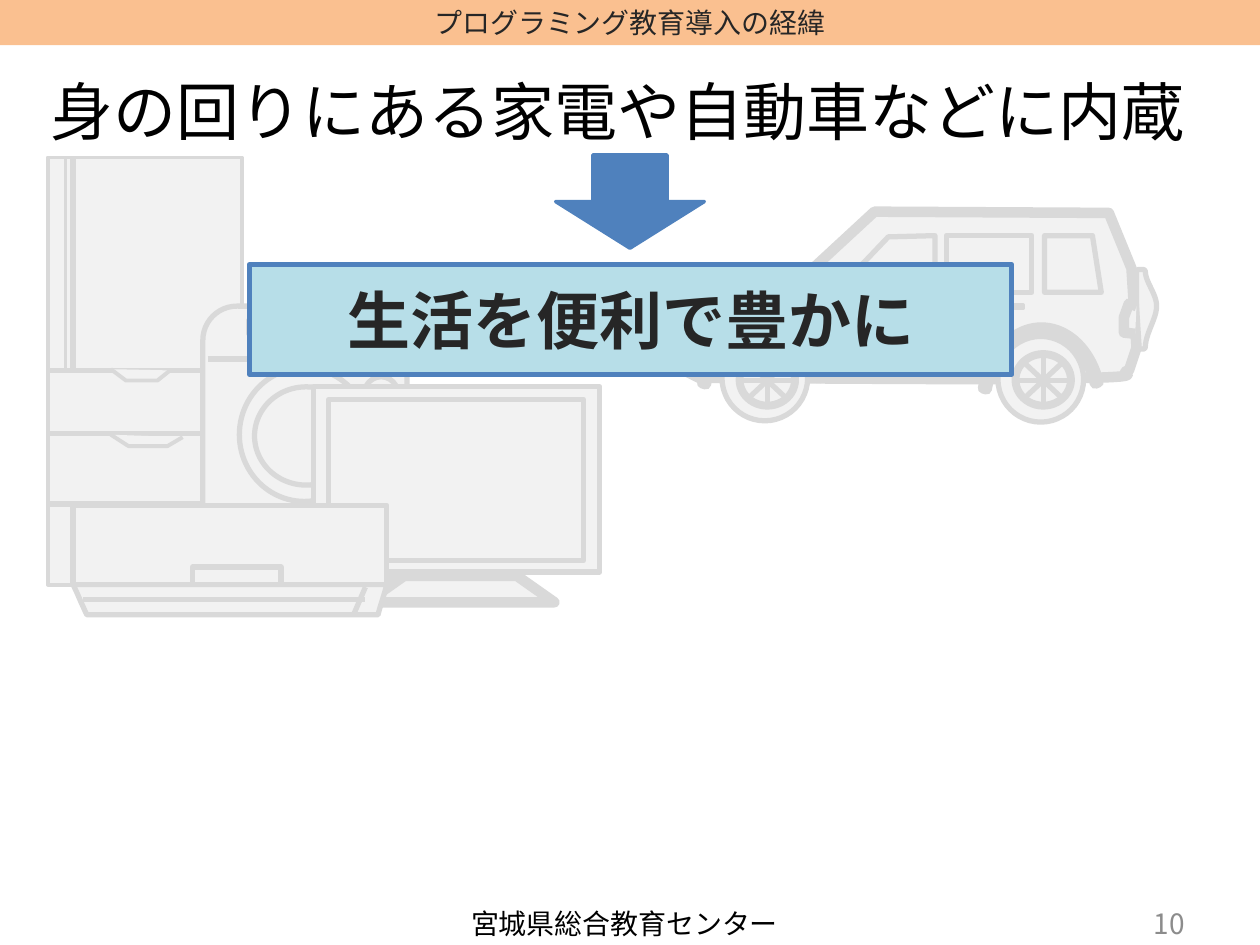
from lxml import etree
from pptx import Presentation
from pptx import util as u
from pptx.dml.color import RGBColor
from pptx.enum import shapes, text
from pptx.oxml.ns import qn

FONT = "Noto Sans CJK JP"
HUES = {"pale": "F2F2F2", "grey": "D9D9D9", "blue": "4F81BD", "aqua": "B7DEE8",
        "peach": "FAC090", "dark": "262626", "black": "000000", "page": "8C8C8C"}
KIND = shapes.MSO_SHAPE
RECT, OVAL, ROUND = KIND.RECTANGLE, KIND.OVAL, KIND.ROUNDED_RECTANGLE
LINE, PATH, OPEN = "line", "path", "open"
LEFT, MID, RIGHT = text.PP_ALIGN.LEFT, text.PP_ALIGN.CENTER, text.PP_ALIGN.RIGHT

FRIDGE = [
    (RECT, 2.25, (0.38, 1.25, 1.54, 3.39)),
    (LINE, 3, (0.58, 1.25, 0.58, 2.94)),
    (LINE, 2.25, (0.52, 1.25, 0.52, 2.94)),
    *[(LINE, 3, (0.38, y, 1.92, y)) for y in (2.94, 3.44, 4)],
    (OPEN, 2.25, [(0.88, 2.93), (1, 3.02), (1.25, 3.02), (1.35, 2.94)]),
    (OPEN, 2.25, [(0.88, 3.45), (1.02, 3.54), (1.33, 3.54), (1.45, 3.47)]),
]
WASHER = [
    (ROUND, 3, (1.61, 2.43, 1.62, 2.19)),
    (OVAL, 3, (1.9, 2.92, 1.03, 1.06)),
    (OVAL, 3, (2.02, 3.07, 0.82, 0.78)),
    (OVAL, 3, (2.89, 2.99, 0.27, 0.28)),
    (RECT, 2, (1.97, 2.54, 0.89, 0.11)),
    (LINE, 3, (1.65, 2.85, 3.24, 2.85)),
]
SCREEN = [
    (RECT, 3, (2.49, 3.07, 2.27, 1.47)),
    (RECT, 3, (2.61, 3.17, 2.02, 1.28)),
    (KIND.FLOWCHART_MANUAL_OPERATION, 6, (2.91, 4.57, 1.49, 0.21)),
]
COOLER = [
    (PATH, 3, [(0.58, 4.64), (3.07, 4.64), (3.05, 4.72, 3.02, 4.8, 3, 4.88),
               (0.69, 4.88), (0.65, 4.8, 0.62, 4.72, 0.58, 4.64)]),
    (RECT, 3, (0.58, 4.01, 2.49, 0.63)),
    (RECT, 3, (1.53, 4.5, 0.7, 0.14)),
    (LINE, 3, (0.66, 4.76, 2.9, 4.76)),
    (LINE, 3, (2.81, 4.87, 2.9, 4.66)),
]
BODY = [
    (PATH, 3, [(9.02, 2.15), (9.03, 2.14), (9.08, 2.14), (9.09, 2.15),
               (9.09, 2.24, 9.18, 2.33, 9.18, 2.43),
               (9.18, 2.53, 9.09, 2.65, 9.09, 2.76),
               (9.08, 2.77), (9.03, 2.77), (9.02, 2.76)]),
    (OPEN, 6, [(5.37, 2.6), (5.52, 2.34), (6.41, 2.17), (6.94, 1.68), (8.8, 1.69),
               (8.98, 2.13), (9.02, 2.76), (8.96, 2.94),
               (8.84, 2.96, 9.17, 2.99, 8.61, 3), (8.04, 3.02, 6.31, 3, 5.55, 3)]),
    (OPEN, 6, [(5.33, 2.6), (5.31, 2.65), (5.31, 2.88), (5.55, 3)]),
    (KIND.BLOCK_ARC, 6, (7.79, 2.6, 0.95, 1.24)),
    (LINE, 6, (6.45, 3, 7.82, 3)),
    (KIND.BLOCK_ARC, 6, (5.56, 2.56, 0.99, 1.25)),
    (OPEN, 6, [(9.01, 2.65), (8.92, 2.64), (8.92, 2.52), (8.96, 2.41), (9.02, 2.43)]),
    (PATH, 3, [(7.42, 1.87), (7.05, 1.88), (6.65, 2.3), (6.64, 2.32), (7.42, 2.32)]),
    (RECT, 3, (7.51, 1.87, 0.68, 0.45)),
    (PATH, 3, [(8.29, 1.87), (8.67, 1.87), (8.74, 2.32), (8.29, 2.32)]),
    (RECT, 2, (7.97, 2.42, 0.15, 0.03)),
]
TYRES = [(5.73, 2.66, 6.09), (7.92, 2.67, 8.28)]
ARC = (117.935, 202.619, 0.031)


def wheel(x, y, mid):
    hub, a, b, c, d = 3.02, 0.22, 0.2, 0.155, 0.145
    ends = [(0, -b, 0, b), (-a, 0, a, 0), (-c, -d, c, d), (c, -d, -c, d)]
    return [(OVAL, 3, (x, y, 0.68, 0.68)),
            (OVAL, 4.5, (mid - a, 2.81, 0.44, 0.41)),
            *[(LINE, 3, (mid + p, hub + q, mid + r, hub + s)) for p, q, r, s in ends]]


def inch(vals):
    return [u.Cm(v * 2.54) for v in vals]


def rgb(hue):
    return RGBColor.from_string(HUES[hue])


def trace(steps, parts=12):
    pts = []
    for step in steps:
        if len(step) == 2:
            pts.append(step)
            continue
        a, b, c, d = pts[-1], step[:2], step[2:4], step[4:]
        for i in range(1, parts + 1):
            t = i / parts
            s = 1 - t
            pts.append(tuple(s**3 * a[k] + 3 * s * s * t * b[k] + 3 * s * t * t * c[k]
                             + t**3 * d[k] for k in (0, 1)))
    return pts


def paint(shape, fill, line=None, width=0):
    shape.shadow.inherit = False
    shape.fill.solid()
    shape.fill.fore_color.rgb = rgb(fill)
    if line:
        shape.line.color.rgb = rgb(line)
        shape.line.width = u.Pt(width)
    else:
        shape.line.fill.background()


def draw(tree, kind, width, geo):
    if kind == LINE:
        rod = tree.add_connector(shapes.MSO_CONNECTOR.STRAIGHT, *inch(geo))
        rod.line.color.rgb = rgb("grey")
        rod.line.width = u.Pt(width)
        etree.SubElement(rod._element.spPr, qn("a:effectLst"))
        return
    if kind in (PATH, OPEN):
        pts = [inch(p) for p in trace(geo)]
        pen = tree.build_freeform(*pts[0])
        pen.add_line_segments(pts[1:], close=kind == PATH)
        shape = pen.convert_to_shape()
    else:
        shape = tree.add_shape(kind, *inch(geo))
        if kind == KIND.BLOCK_ARC:
            for i, val in enumerate(ARC):
                shape.adjustments[i] = val
        elif kind == KIND.FLOWCHART_MANUAL_OPERATION:
            shape.rotation = 180
    paint(shape, "pale", "grey", width)


def write(shape, words, size, hue, align, bold=False):
    frame = shape.text_frame
    frame.word_wrap = True
    frame.auto_size = text.MSO_AUTO_SIZE.NONE
    frame.vertical_anchor = text.MSO_ANCHOR.MIDDLE
    para = frame.paragraphs[0]
    para.alignment = align
    run = para.add_run()
    run.text = words
    font = run.font
    font.name, font.size, font.bold = FONT, u.Pt(size), bold
    font.color.rgb = rgb(hue)
    etree.SubElement(run._r.get_or_add_rPr(), qn("a:ea"), typeface=FONT)


def main():
    deck = Presentation()
    deck.slide_width, deck.slide_height = inch((10, 7.5))
    slide = deck.slides.add_slide(deck.slide_layouts[5])
    tree = slide.shapes

    title = tree.title
    title.left, title.top, title.width, title.height = inch((0.3, 0.52, 9.41, 0.71))
    write(title, "身の回りにある家電や自動車などに内蔵", 36, "black", LEFT)

    band = tree.add_shape(RECT, *inch((0, 0, 10, 0.36)))
    paint(band, "peach")
    write(band, "プログラミング教育導入の経緯", 16, "dark", MID)

    car = BODY + [part for tyre in TYRES for part in wheel(*tyre)]
    for parts in (FRIDGE + WASHER + SCREEN + COOLER, car):
        group = tree.add_group_shape().shapes
        for part in parts:
            draw(group, *part)

    arrow = tree.add_shape(KIND.DOWN_ARROW, *inch((4.41, 1.23, 1.18, 0.74)))
    paint(arrow, "blue", "blue", 2)
    box = tree.add_shape(RECT, *inch((1.98, 2.1, 6.05, 0.87)))
    paint(box, "aqua", "blue", 3)
    write(box, "生活を便利で豊かに", 36, "dark", MID, True)

    for words, geo, hue, align in [
        ("宮城県総合教育センター", (3.64, 7.14, 2.72, 0.37), "black", LEFT),
        ("10", (7.17, 7.13, 2.33, 0.4), "page", RIGHT),
    ]:
        write(tree.add_textbox(*inch(geo)), words, 16, hue, align)

    deck.save("out.pptx")


if __name__ == "__main__":
    main()
